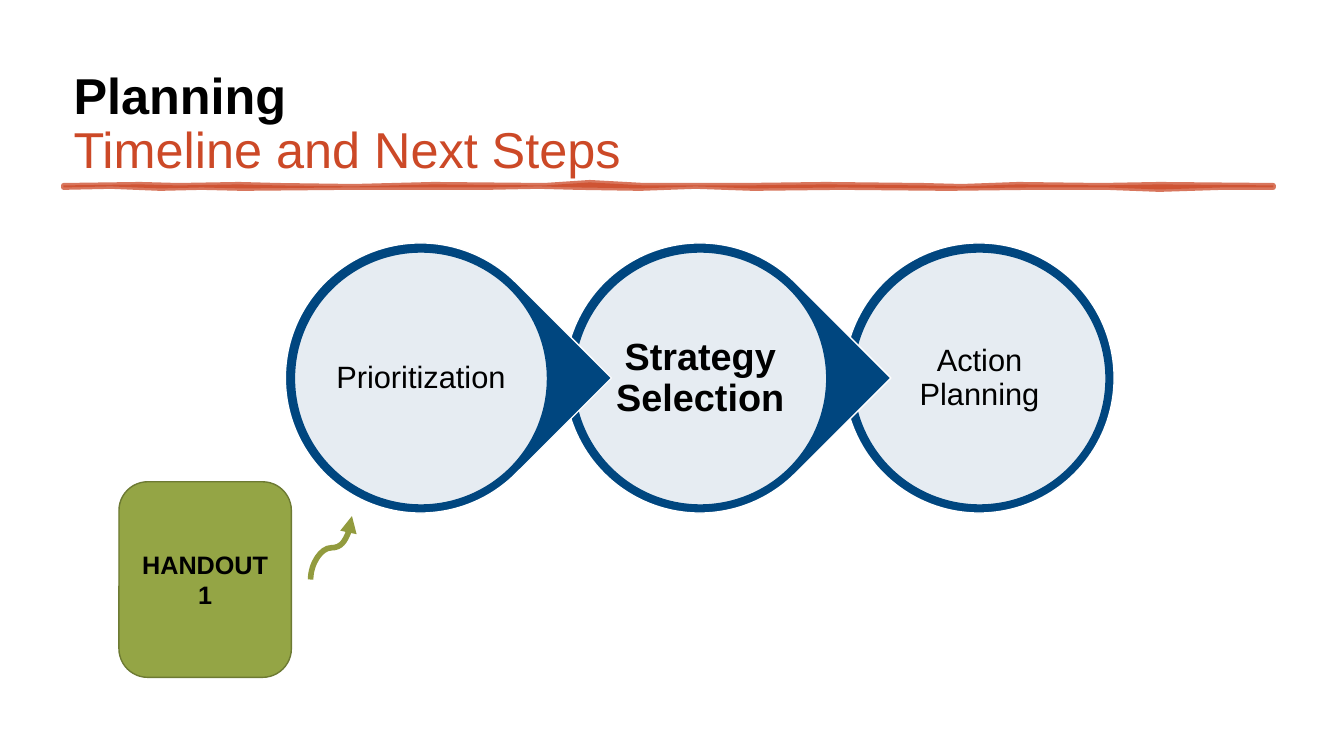
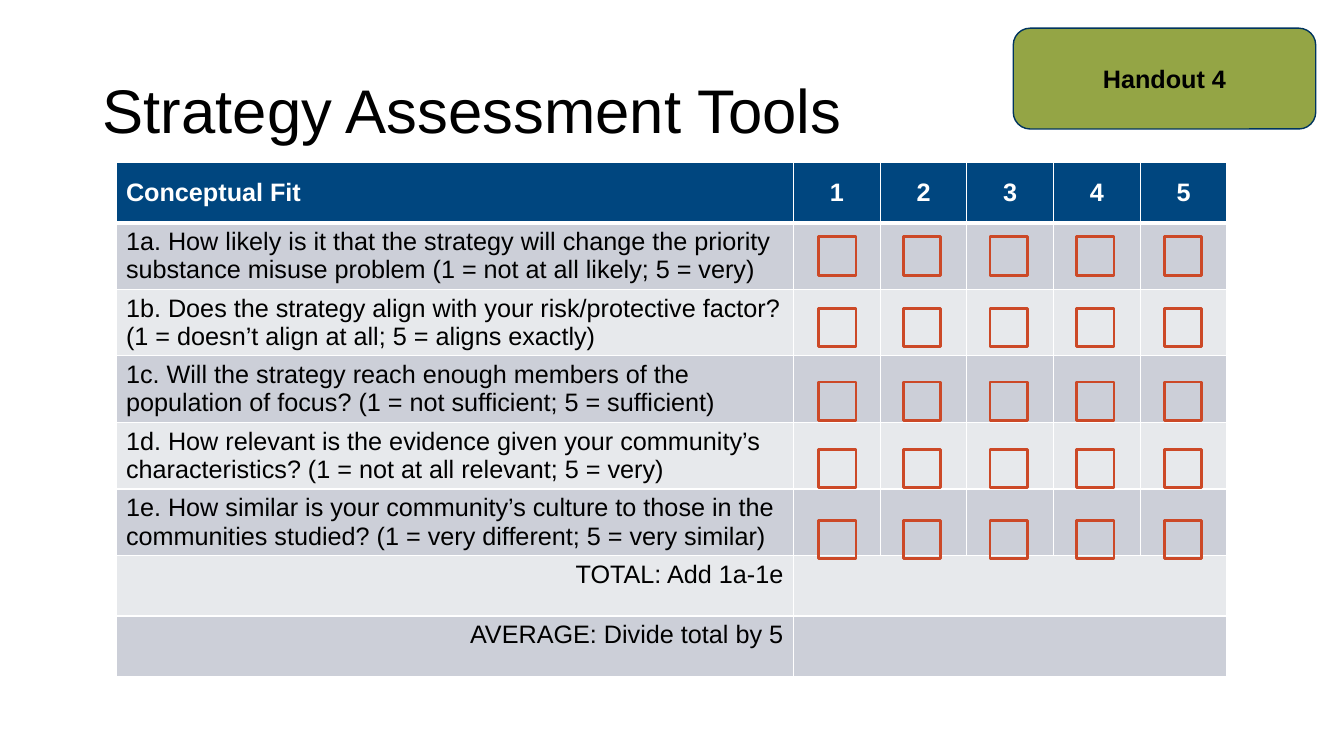
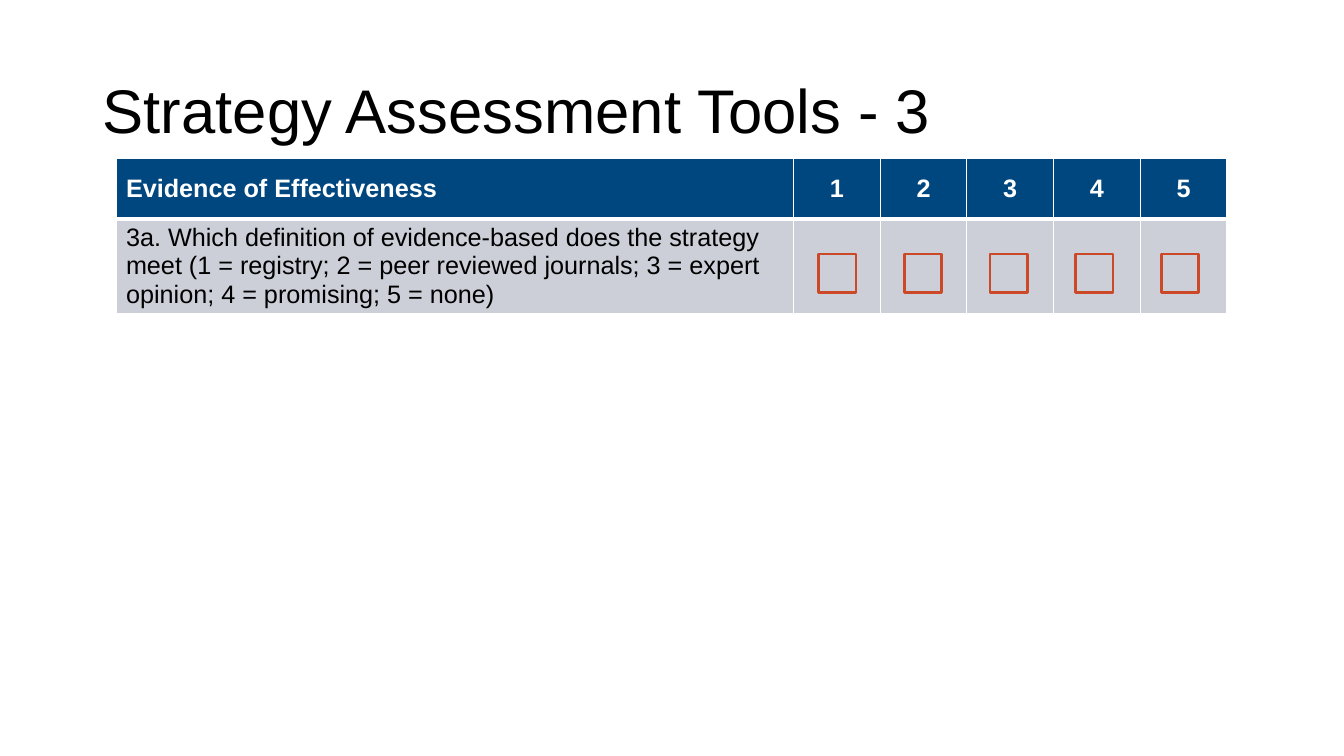
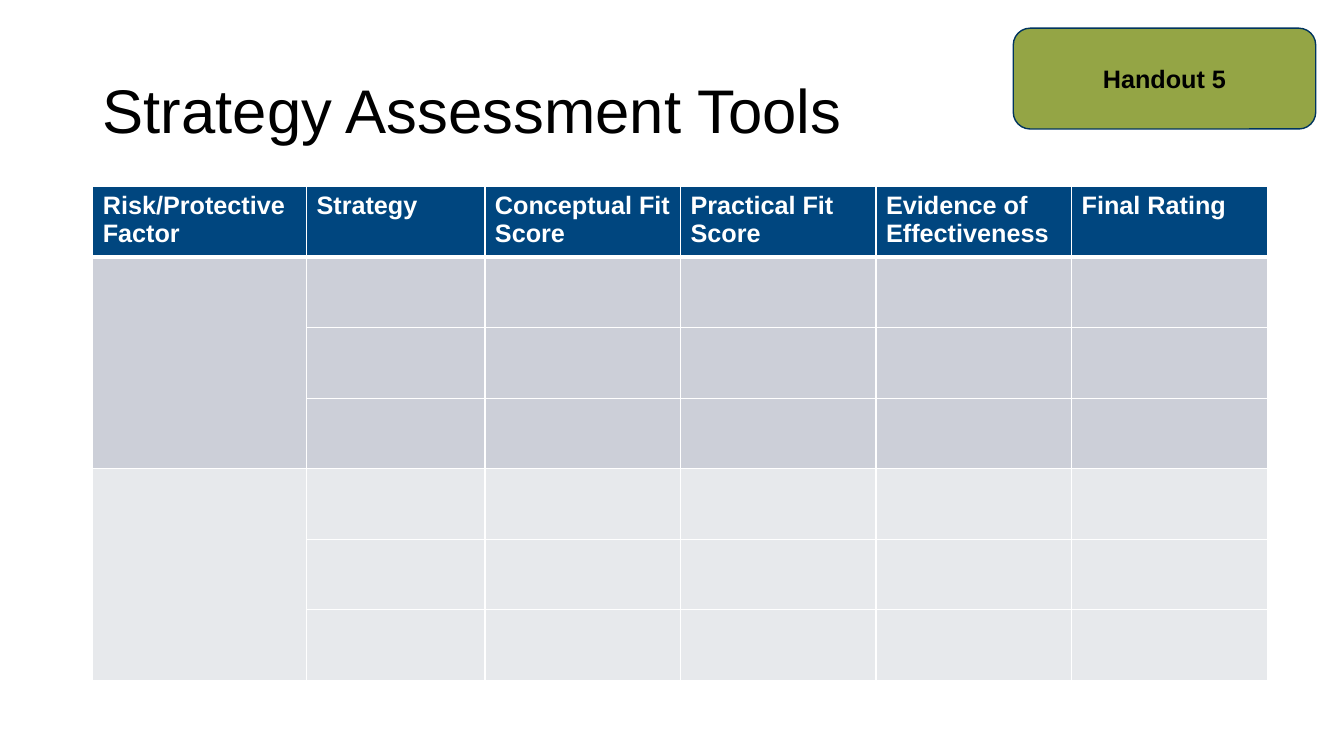
"""Build four slides on planning and assessing prevention strategies."""
from lxml import etree
from pptx import Presentation
from pptx.dml.color import RGBColor
from pptx.enum.shapes import MSO_CONNECTOR, MSO_SHAPE
from pptx.enum.text import MSO_ANCHOR, MSO_AUTO_SIZE, PP_ALIGN
from pptx.oxml.ns import qn
from pptx.util import Emu, Pt

PX = 9144
TITLE_ONLY = 5
FONT = "Arial"
COLORS = {
    "black": "000000", "white": "FFFFFF", "blue": "00467F", "navy": "00345E",
    "orange": "CC4927", "green": "94A545", "moss": "6D7A33", "arrow": "929B3E",
    "band_dark": "CCCFD8", "band_light": "E7E9EC",
}
LEFT, CENTER, RIGHT = PP_ALIGN.LEFT, PP_ALIGN.CENTER, PP_ALIGN.RIGHT
TOP, MIDDLE, BOTTOM = MSO_ANCHOR.TOP, MSO_ANCHOR.MIDDLE, MSO_ANCHOR.BOTTOM
CHECK_SIZE = (37, 38)
BADGE_AREA = (1005, 28, 300, 100)
TITLE_AREA = (92, 40, 1150, 145)
RATING_WIDTHS = (672,) + (86,) * 5
SCORES = ("1", "2", "3", "4", "5")
BRUSH_TOP = (
    (63, 184), (139, 183), (177, 184), (237, 183), (276, 184), (351, 185),
    (430, 183), (540, 184), (585, 181), (639, 184), (738, 184), (819, 183),
    (915, 184), (954, 185), (1010, 183), (1092, 184), (1150, 183), (1263, 184),
)
BRUSH_BOTTOM = (
    (1263, 186), (1212, 186), (1150, 188), (1098, 186), (1023, 186), (940, 187),
    (834, 186), (747, 187), (690, 185), (635, 187), (573, 186), (534, 185),
    (483, 186), (420, 186), (345, 186), (240, 187), (200, 186), (159, 187),
    (110, 185), (63, 186),
)


def px(length):
    """Turn a length in px into EMU."""
    return Emu(length * PX)


def area_of(area):
    """Turn an area in px into EMU."""
    return [px(length) for length in area]


def color(name):
    """Look up a palette colour."""
    return RGBColor.from_string(COLORS[name])


def set_all(target, values):
    """Set several attributes of one object."""
    for name, value in values.items():
        setattr(target, name, value)


def style_span(span, size, hue="black", bold=False):
    """Give a run its font, size, weight and colour."""
    set_all(span.font, {"name": FONT, "size": Pt(size), "bold": bold})
    span.font.color.rgb = color(hue)


def write(para, text, size, hue="black", bold=False, align=LEFT):
    """Fill a paragraph with one styled run."""
    para.alignment = align
    span = para.add_run()
    span.text = text
    style_span(span, size, hue, bold)


def set_alpha(fill_parent, percent):
    """Make the solid fill inside an element partly transparent."""
    shade = fill_parent.find(qn("a:solidFill"))[0]
    etree.SubElement(shade, qn("a:alpha"), val=str(percent * 1000))


def paint(shape, fill=None, line=None, width=1):
    """Set a shape's fill and outline without a shadow."""
    shape.shadow.inherit = False
    if fill:
        shape.fill.solid()
        shape.fill.fore_color.rgb = color(fill)
    else:
        shape.fill.background()
    shape.line.color.rgb = color(line)
    shape.line.width = Pt(width)


def add_shape(page, kind, area, fill=None, line="white", width=1):
    """Add a painted preset shape."""
    shape = page.shapes.add_shape(kind, *area_of(area))
    paint(shape, fill, line, width)
    return shape


def add_page(deck, lines, area=TITLE_AREA, size=44, anchor=MIDDLE):
    """Add a slide whose title has one or more (text, colour, bold) lines."""
    page = deck.slides.add_slide(deck.slide_layouts[TITLE_ONLY])
    title = page.shapes.title
    set_all(title, dict(zip(("left", "top", "width", "height"), area_of(area))))
    set_all(title.text_frame, {
        "word_wrap": True, "auto_size": MSO_AUTO_SIZE.NONE, "vertical_anchor": anchor})
    para = title.text_frame.paragraphs[0]
    para.line_spacing = 0.9
    for index, (text, hue, bold) in enumerate(lines):
        if index:
            para.add_line_break()
        write(para, text, size, hue, bold)
    return page


def add_badge(page, text, area=BADGE_AREA, line="navy"):
    """Add a rounded green handout label."""
    badge = add_shape(page, MSO_SHAPE.ROUNDED_RECTANGLE, area, "green", line)
    set_all(badge.text_frame, {"word_wrap": True, "vertical_anchor": MIDDLE})
    write(badge.text_frame.paragraphs[0], text, 18, bold=True, align=CENTER)


def add_brush_line(page):
    """Add the uneven brush stroke below the title."""
    builder = page.shapes.build_freeform(*BRUSH_TOP[0], scale=PX)
    builder.add_line_segments(BRUSH_TOP[1:] + BRUSH_BOTTOM, close=True)
    brush = builder.convert_to_shape()
    paint(brush, "orange", "orange", 3.5)
    set_alpha(brush._element.spPr, 75)
    set_alpha(brush.line._get_or_add_ln(), 75)


def add_step(page, left, text, size, bold, pointed):
    """Add one ringed step, pointed to the right unless it is the last."""
    kind = MSO_SHAPE.TEAR if pointed else MSO_SHAPE.OVAL
    ring = add_shape(page, kind, (left, 241, 268, 268), "blue")
    if pointed:
        ring.rotation = 45
    disc = add_shape(page, MSO_SHAPE.OVAL, (left + 9, 250, 251, 251), "white", "blue")
    set_alpha(disc._element.spPr, 90)
    set_all(disc.text_frame, {
        "word_wrap": True, "vertical_anchor": MIDDLE,
        **{f"margin_{side}": px(3) for side in ("left", "top", "right", "bottom")}})
    para = disc.text_frame.paragraphs[0]
    para.line_spacing = 0.9
    write(para, text, size, bold=bold, align=CENTER)


def add_curved_arrow(page):
    """Add the curved arrow that leads from the handout to the first step."""
    arrow = page.shapes.add_connector(
        MSO_CONNECTOR.CURVE, *area_of((360, 564, 297, 523)))
    arrow.line.color.rgb = color("arrow")
    arrow.line.width = Pt(4)
    etree.SubElement(arrow.line._get_or_add_ln(), qn("a:tailEnd"), type="triangle")
    properties = arrow._element.spPr
    etree.SubElement(properties, qn("a:effectLst"))
    properties.find(qn("a:xfrm")).set("rot", str(90 * 60000))


def set_borders(cell, row):
    """Draw white cell borders, heavier below the header row."""
    properties = cell._tc.get_or_add_tcPr()
    for edge in ("lnL", "lnR", "lnT", "lnB"):
        width = 3 if (row, edge) in ((0, "lnB"), (1, "lnT")) else 1
        border = etree.SubElement(properties, qn(f"a:{edge}"), w=str(Pt(width)))
        fill = etree.SubElement(border, qn("a:solidFill"))
        etree.SubElement(fill, qn("a:srgbClr"), val=COLORS["white"])


def add_grid(page, corner, widths, height, rows, band=1, merges=(), head_anchor=MIDDLE,
             head_align=CENTER, right_rows=()):
    """Add a table with a blue header and grey bands of equal depth."""
    area = (*corner, sum(widths), height * len(rows))
    table = page.shapes.add_table(len(rows), len(widths), *area_of(area)).table
    for column, width in zip(table.columns, widths):
        column.width = px(width)
    for row, texts in enumerate(rows):
        table.rows[row].height = px(height)
        stripe = ("band_dark", "band_light")[(row - 1) // band % 2]
        for column in range(len(widths)):
            cell = table.cell(row, column)
            set_borders(cell, row)
            cell.fill.solid()
            cell.fill.fore_color.rgb = color(stripe if row else "blue")
            cell.vertical_anchor = TOP if row else head_anchor
            if column < len(texts):
                align = RIGHT if row in right_rows else LEFT
                if row == 0 and column:
                    align = head_align
                write(cell.text_frame.paragraphs[0], texts[column], 18,
                      "black" if row else "white", row == 0, align)
    for first, last in merges:
        table.cell(*first).merge(table.cell(*last))


def add_checks(page, lefts, tops):
    """Add a grid of empty check boxes."""
    for top in tops:
        for left in lefts:
            add_shape(page, MSO_SHAPE.RECTANGLE, (left, top, *CHECK_SIZE),
                      line="orange", width=2)


def build_timeline(deck):
    """Build the slide with the three planning steps."""
    page = add_page(
        deck, [("Planning", "black", True), ("Timeline and Next Steps", "orange", False)],
        (63, 26, 1205, 157), 36, BOTTOM)
    add_brush_line(page)
    steps = (("Prioritization", 22, False), ("Strategy Selection", 27, True),
             ("Action Planning", 22, False))
    for index in reversed(range(len(steps))):
        add_step(page, 283 + 277 * index, *steps[index], pointed=index < len(steps) - 1)
    add_badge(page, "HANDOUT 1", (118, 478, 171, 194), "moss")
    add_curved_arrow(page)


def build_conceptual_fit(deck):
    """Build the conceptual fit rating slide."""
    page = add_page(deck, [("Strategy Assessment Tools", "black", False)])
    questions = (
        "1a. How likely is it that the strategy will change the priority substance "
        "misuse problem (1 = not at all likely; 5 = very)",
        "1b. Does the strategy align with your risk/protective factor? "
        "(1 = doesn’t align at all; 5 = aligns exactly)",
        "1c. Will the strategy reach enough members of the population of focus? "
        "(1 = not sufficient; 5 = sufficient)",
        "1d. How relevant is the evidence given your community’s characteristics? "
        "(1 = not at all relevant; 5 = very)",
        "1e. How similar is your community’s culture to those in the communities "
        "studied? (1 = very different; 5 = very similar)",
        "TOTAL: Add 1a-1e",
        "AVERAGE: Divide total by 5",
    )
    rows = [("Conceptual Fit", *SCORES)] + [(question,) for question in questions]
    add_grid(page, (115, 161), RATING_WIDTHS, 60, rows, right_rows=(6, 7),
             merges=[((row, 1), (row, 5)) for row in (6, 7)])
    add_checks(page, (812, 896, 982, 1068, 1155), (235, 306, 379, 446, 516))
    add_badge(page, "Handout 4")


def build_evidence(deck):
    """Build the evidence of effectiveness rating slide."""
    page = add_page(deck, [("Strategy Assessment Tools - 3", "black", False)])
    question = ("3a. Which definition of evidence-based does the strategy meet "
                "(1 = registry; 2 = peer reviewed journals; 3 = expert opinion; "
                "4 = promising; 5 = none)")
    rows = [("Evidence of Effectiveness", *SCORES), (question,)]
    add_grid(page, (115, 157), RATING_WIDTHS, 60, rows)
    add_checks(page, [812 + 85 * index for index in range(5)], (252,))


def build_summary(deck):
    """Build the blank summary table slide."""
    page = add_page(deck, [("Strategy Assessment Tools", "black", False)])
    heads = ("Risk/Protective Factor", "Strategy", "Conceptual Fit Score",
             "Practical Fit Score", "Evidence of Effectiveness", "Final Rating")
    add_grid(page, (92, 185), (212, 177) + (194,) * 4, 70, [heads] + [()] * 6, band=3,
             merges=[((row, 0), (row + 2, 0)) for row in (1, 4)],
             head_anchor=TOP, head_align=LEFT)
    add_badge(page, "Handout 5")


def main():
    """Build and save the deck."""
    deck = Presentation()
    set_all(deck, {"slide_width": px(1333), "slide_height": px(750)})
    for build in (build_timeline, build_conceptual_fit, build_evidence, build_summary):
        build(deck)
    deck.save("out.pptx")


if __name__ == "__main__":
    main()
